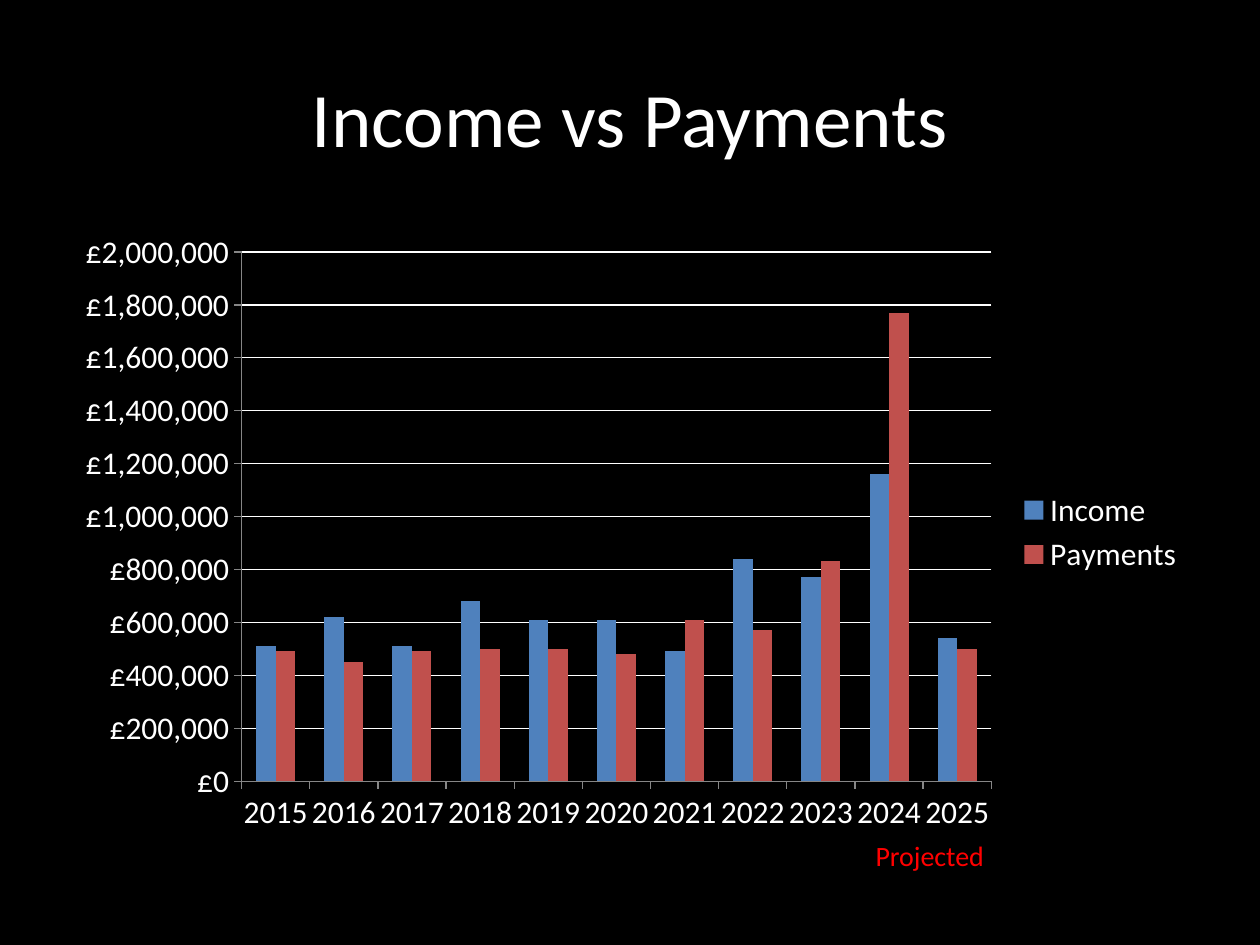
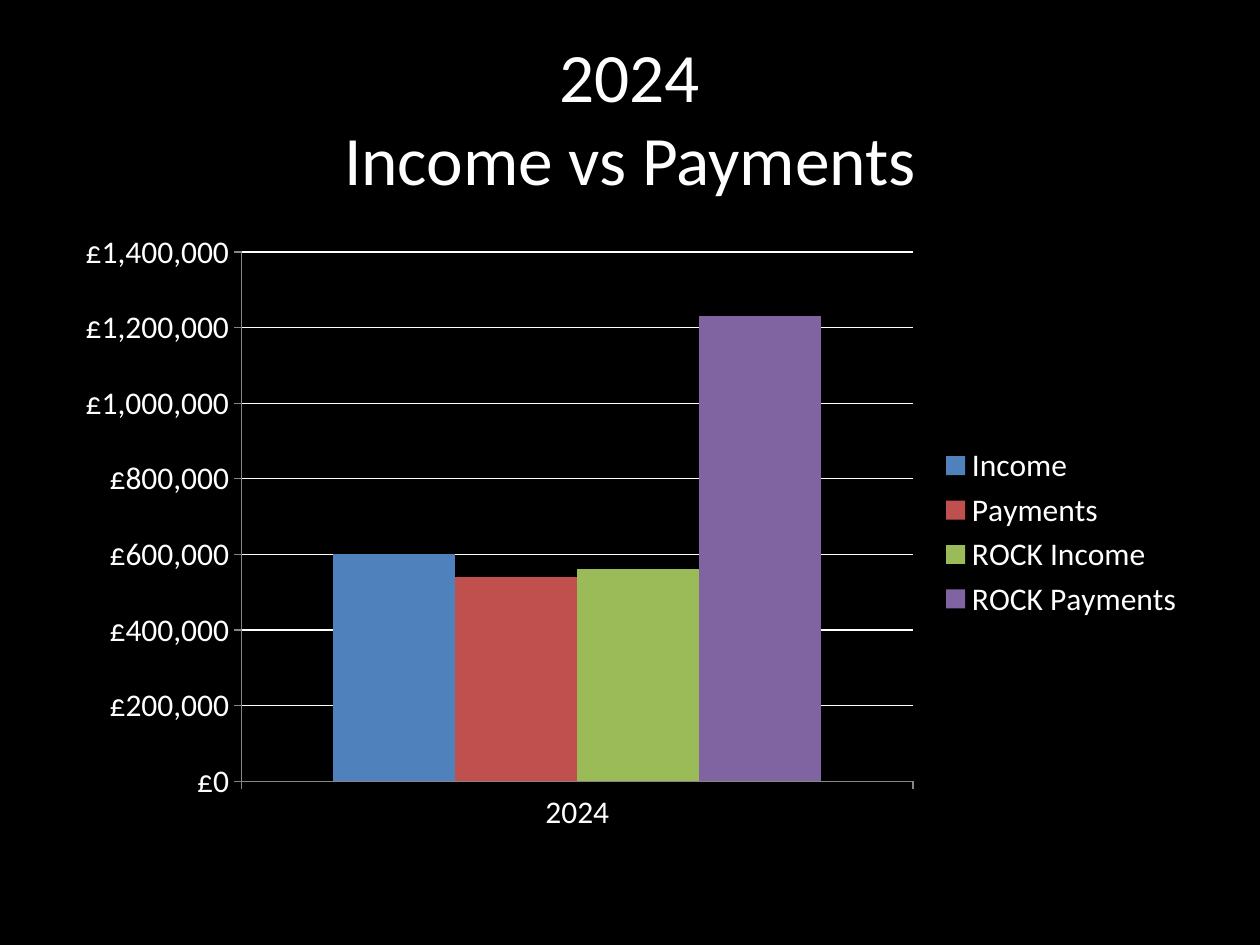
from pptx import Presentation
from pptx.chart.data import CategoryChartData
from pptx.dml.color import RGBColor
from pptx.enum.chart import XL_CHART_TYPE as CT, XL_LEGEND_POSITION as LP, XL_TICK_MARK as TICK
from pptx.enum.text import MSO_ANCHOR as ANCHOR, PP_ALIGN as ALIGN
from pptx.oxml.ns import qn
from pptx.util import Inches, Pt
from lxml import etree

# Shared look
FONT = "Calibri"
BLACK, WHITE, RED, GREY = "000000", "FFFFFF", "FF0000", "868686"
SERIES_COLORS = ["4F81BD", "C0504D", "9BBB59", "8064A2"]


def rgb(value):
    return RGBColor.from_string(value)


def write(tf, text, size=18, color=WHITE, align=ALIGN.LEFT):
    p = tf.paragraphs[0]
    p.text = text
    p.alignment = align
    for r in p.runs:
        r.font.name, r.font.size = FONT, Pt(size)
        r.font.color.rgb = rgb(color)
    # Line breaks take the same size as the text around them
    for br in p._p.findall(qn("a:br")):
        etree.SubElement(br, qn("a:rPr")).set("sz", str(round(size * 100)))


# Slide content: title, title size, categories, series
slides = [
    ("Income vs Payments", 44, [str(year) for year in range(2015, 2026)], {
        "Income": [510000, 620000, 510000, 680000, 610000, 610000,
                   490000, 840000, 770000, 1160000, 540000],
        "Payments": [490000, 450000, 490000, 500000, 500000, 480000,
                     610000, 570000, 830000, 1770000, 500000],
    }),
    ("2024\vIncome vs Payments", 39.6, ["2024"], {
        "Income": [600000],
        "Payments": [540000],
        "ROCK Income": [560000],
        "ROCK Payments": [1230000],
    }),
]

prs = Presentation()
prs.slide_width, prs.slide_height = Inches(10), Inches(7.5)
bg = prs.slide_master.background.fill
bg.solid()
bg.fore_color.rgb = rgb(BLACK)

for title, size, years, series in slides:
    s = prs.slides.add_slide(prs.slide_layouts[5])

    # Title
    sp = s.shapes.title
    sp.left, sp.top, sp.width, sp.height = Inches(0.5), Inches(0.3), Inches(9), Inches(1.25)
    sp.text_frame.vertical_anchor = ANCHOR.MIDDLE
    write(sp.text_frame, title, size=size, align=ALIGN.CENTER)

    # Column chart
    data = CategoryChartData(number_format='"£"#,##0')
    data.categories = years
    for name, values in series.items():
        data.add_series(name, values)
    chart = s.shapes.add_chart(CT.COLUMN_CLUSTERED, Inches(0.5), Inches(1.75),
                               Inches(9), Inches(4.95), data).chart
    chart.has_title = False
    chart.font.name, chart.font.size = FONT, Pt(18)
    plot = chart.plots[0]
    plot.gap_width, plot.overlap = 150, 0
    plot.vary_by_categories = False
    for ser, color in zip(plot.series, SERIES_COLORS):
        ser.format.fill.solid()
        ser.format.fill.fore_color.rgb = rgb(color)
        ser.invert_if_negative = False

    # Axes and gridlines
    for axis in (chart.category_axis, chart.value_axis):
        axis.major_tick_mark, axis.minor_tick_mark = TICK.OUTSIDE, TICK.NONE
        axis.tick_labels.font.size = Pt(18)
        axis.tick_labels.font.color.rgb = rgb(WHITE)
        axis.format.line.color.rgb = rgb(GREY)
        axis.format.line.width = Pt(0.75)
    chart.value_axis.tick_labels.number_format = '"£"#,##0'
    chart.value_axis.tick_labels.number_format_is_linked = False
    grid = chart.value_axis.major_gridlines.format.line
    grid.color.rgb, grid.width = rgb(WHITE), Pt(0.75)

    # Legend
    chart.has_legend = True
    chart.legend.position = LP.RIGHT
    chart.legend.include_in_layout = False
    chart.legend.font.size = Pt(18)
    chart.legend.font.color.rgb = rgb(WHITE)

# Note under the last year of the first chart
tf = prs.slides[0].shapes.add_textbox(Inches(6.85), Inches(6.61), Inches(1.08), Inches(0.37)).text_frame
tf.word_wrap = False
write(tf, "Projected", size=16, color=RED)

prs.save("out.pptx")
